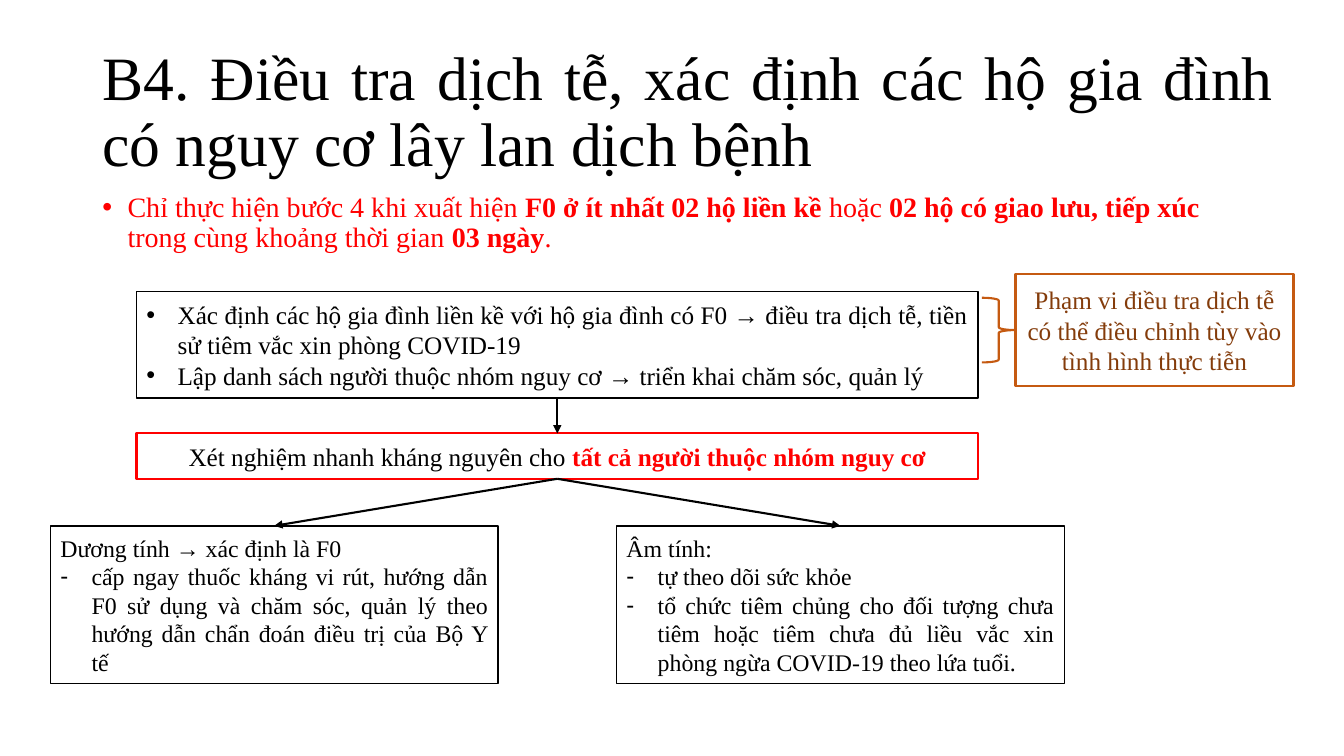
from dataclasses import dataclass

from lxml import etree
from pptx import Presentation
from pptx.dml.color import RGBColor
from pptx.enum.shapes import MSO_CONNECTOR, MSO_SHAPE
from pptx.enum.text import MSO_ANCHOR, MSO_AUTO_SIZE, PP_ALIGN
from pptx.oxml.ns import qn
from pptx.util import Inches, Pt

RECTANGLE, BRACE = MSO_SHAPE.RECTANGLE, MSO_SHAPE.RIGHT_BRACE
STRAIGHT = MSO_CONNECTOR.STRAIGHT
CENTER, JUSTIFY, LEFT = PP_ALIGN.CENTER, PP_ALIGN.JUSTIFY, PP_ALIGN.LEFT
TOP, MIDDLE = MSO_ANCHOR.TOP, MSO_ANCHOR.MIDDLE
NO_AUTOFIT = MSO_AUTO_SIZE.NONE
TOP_SIDE, BOTTOM_SIDE = 0, 2
FONT = "Times New Roman"
BLACK, WHITE, RED, ORANGE, BROWN = "000000", "FFFFFF", "FF0000", "C55A11", "843C0B"
WIDTH, HEIGHT = Inches(13.33), Inches(7.5)
COLUMNS, ROWS = 800, 450

TITLE = "B4. Điều tra dịch tễ, xác định các hộ gia đình có nguy cơ lây lan dịch bệnh"
CONDITION = [("•", [
    ("Chỉ thực hiện bước 4 khi xuất hiện ", {}),
    ("F0 ở ít nhất 02 hộ liền kề ", {"bold": True}),
    ("hoặc ", {}),
    ("02 hộ có giao lưu, tiếp xúc ", {"bold": True}),
    ("trong cùng khoảng thời gian ", {}),
    ("03 ngày", {"bold": True}),
    (".", {}),
])]
INVESTIGATION = [
    ("•", [("Xác định các hộ gia đình liền kề với hộ gia đình có F0 → điều tra dịch tễ, "
            "tiền sử tiêm vắc xin phòng COVID-19", {})]),
    ("•", [("Lập danh sách người thuộc nhóm nguy cơ → triển khai chăm sóc, quản lý", {})]),
]
TESTING = [("", [
    ("Xét nghiệm nhanh kháng nguyên cho ", {}),
    ("tất cả người thuộc nhóm nguy cơ", {"bold": True, "color": RED}),
])]
POSITIVE = [
    ("", [("Dương tính → xác định là F0", {})]),
    ("-", [("cấp ngay thuốc kháng vi rút, hướng dẫn F0 sử dụng và chăm sóc, quản lý theo "
            "hướng dẫn chẩn đoán điều trị của Bộ Y tế", {})]),
]
NEGATIVE = [
    ("", [("Âm tính:", {})]),
    ("-", [("tự theo dõi sức khỏe", {})]),
    ("-", [("tổ chức tiêm chủng cho đối tượng chưa tiêm hoặc tiêm chưa đủ liều vắc xin "
            "phòng ngừa COVID-19 theo lứa tuổi.", {})]),
]
SCOPE = [("", [("Phạm vi điều tra dịch tễ có thể điều chỉnh tùy vào tình hình thực tiễn", {})])]


@dataclass
class Box:
    left: float
    top: float
    width: float
    height: float

    def area(self, left, top, width, height):
        return Box(self.left + left, self.top + top, width, height)

    def emu(self):
        across, down = WIDTH / COLUMNS, HEIGHT / ROWS
        return (round(self.left * across), round(self.top * down),
                round(self.width * across), round(self.height * down))


def rgb(color):
    return RGBColor.from_string(color)


def apply(target, values):
    for name, value in values.items():
        setattr(target, name, value)


def add_bullet(paragraph, mark, indent):
    properties = paragraph._p.get_or_add_pPr()
    properties.set("marL", str(Inches(indent)))
    properties.set("indent", str(-Inches(indent)))
    etree.SubElement(properties, qn("a:buFont")).set("typeface", "Arial")
    etree.SubElement(properties, qn("a:buChar")).set("char", mark)


def write(frame, content, size, color, align, anchor=MIDDLE, indent=0.31, spacing=1.0):
    apply(frame, {"word_wrap": True, "auto_size": NO_AUTOFIT, "vertical_anchor": anchor})
    for index, (mark, runs) in enumerate(content):
        paragraph = frame.add_paragraph() if index else frame.paragraphs[0]
        if mark:
            add_bullet(paragraph, mark, indent)
        apply(paragraph, {"alignment": align, "line_spacing": spacing})
        for text, style in runs:
            run = paragraph.add_run()
            run.text = text
            apply(run.font, {"name": FONT, "size": Pt(size), "bold": style.get("bold", False)})
            run.font.color.rgb = rgb(style.get("color", color))


def add_outlined(slide, preset, box, color, weight):
    outlined = slide.shapes.add_shape(preset, *box.emu())
    outlined.shadow.inherit = False
    outlined.line.color.rgb = rgb(color)
    outlined.line.width = Pt(weight)
    return outlined


def add_card(slide, box, content, border, weight, size, align, color=BLACK):
    card = add_outlined(slide, RECTANGLE, box, border, weight)
    card.fill.solid()
    card.fill.fore_color.rgb = rgb(WHITE)
    write(card.text_frame, content, size, color, align)
    return card


def add_arrow(slide, source, target):
    arrow = slide.shapes.add_connector(STRAIGHT, 0, 0, 0, 0)
    arrow.begin_connect(source, BOTTOM_SIDE)
    arrow.end_connect(target, TOP_SIDE)
    arrow.line.color.rgb = rgb(BLACK)
    arrow.line.width = Pt(1.5)
    outline = arrow._element.spPr.find(qn("a:ln"))
    etree.SubElement(outline, qn("a:tailEnd")).set("type", "triangle")
    etree.SubElement(arrow._element.spPr, qn("a:effectLst"))


def add_heading(slide, box):
    title = slide.shapes.title
    apply(title, dict(zip(("left", "top", "width", "height"), box.emu())))
    write(title.text_frame, [("", [(TITLE, {})])], 44, BLACK, JUSTIFY, spacing=0.9)


def add_condition(slide, box):
    condition = slide.shapes.add_textbox(*box.emu())
    write(condition.text_frame, CONDITION, 20, RED, LEFT, TOP, 0.25, 0.9)


def add_flow(slide, box):
    step_width, outcome_width, outcome_height = 501, 266.5, 94
    step_left = (box.width - step_width) / 2
    outcome_top = box.height - outcome_height
    investigation = add_card(slide, box.area(step_left, 0, step_width, 63.5),
                             INVESTIGATION, BLACK, 1, 18, JUSTIFY)
    testing = add_card(slide, box.area(step_left, 84.5, step_width, 27),
                       TESTING, RED, 1.5, 18, CENTER)
    add_arrow(slide, investigation, testing)
    for left, content in ((0, POSITIVE), (box.width - outcome_width, NEGATIVE)):
        outcome = add_card(slide, box.area(left, outcome_top, outcome_width, outcome_height),
                           content, BLACK, 1, 17, JUSTIFY)
        add_arrow(slide, testing, outcome)


def add_scope(slide, box):
    brace_width, brace_height = 20, 38.5
    brace_top = (box.height - brace_height) / 2
    brace = add_outlined(slide, BRACE, box.area(0, brace_top, brace_width, brace_height),
                         ORANGE, 1.5)
    brace.fill.background()
    add_card(slide, box.area(brace_width, 0, box.width - brace_width, box.height),
             SCOPE, ORANGE, 1.5, 18, CENTER, BROWN)


def main():
    deck = Presentation()
    apply(deck, {"slide_width": WIDTH, "slide_height": HEIGHT})
    slide = deck.slides.add_slide(deck.slide_layouts[5])
    page = Box(0, 0, COLUMNS, ROWS)
    add_heading(slide, page.area(55, 24, 710, 87))
    add_condition(slide, page.area(55, 112, 690, 50))
    add_flow(slide, page.area(30, 173.5, 603.5, 233.5))
    add_scope(slide, page.area(584.5, 163, 185.5, 67))
    deck.save("out.pptx")


if __name__ == "__main__":
    main()
